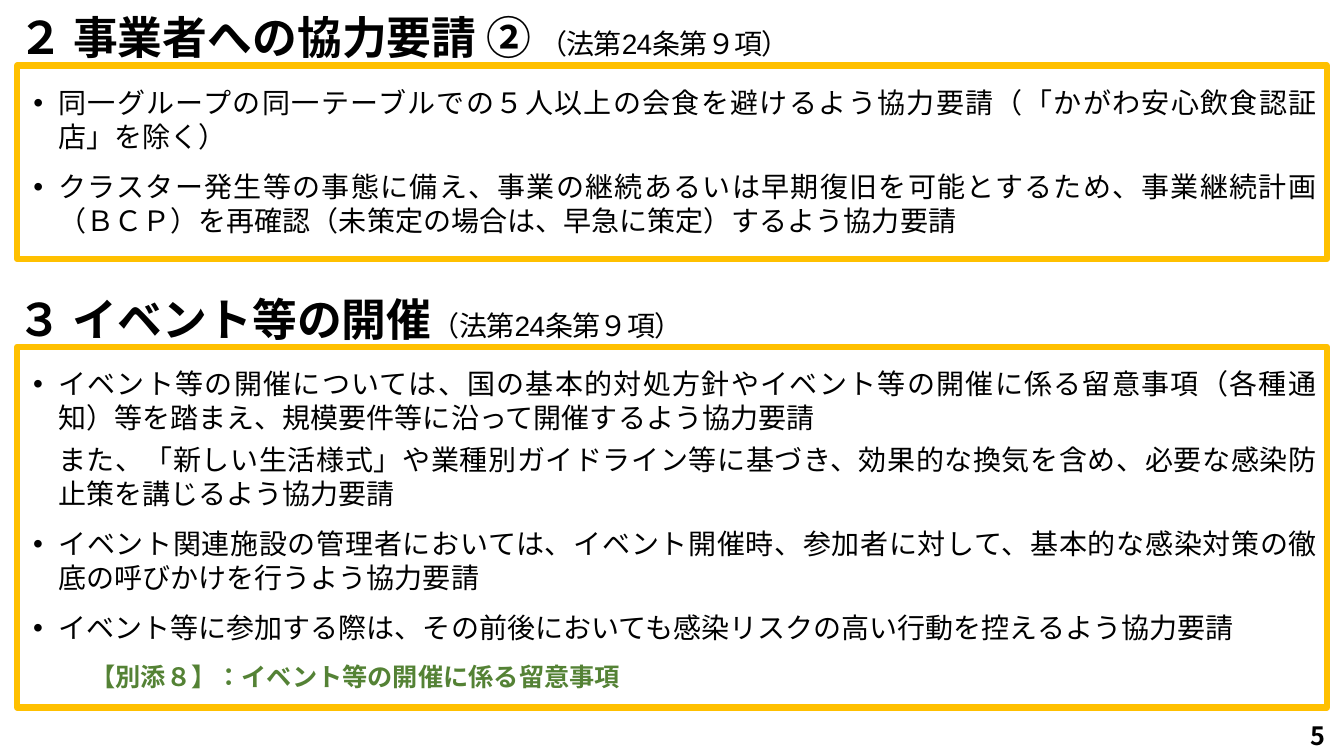
from pptx import Presentation
from pptx import util as u
from pptx.dml.color import RGBColor
from pptx.enum import shapes, text
from pptx.oxml import parse_xml
from pptx.oxml.ns import nsdecls, qn

BLACK = RGBColor(0x00, 0x00, 0x00)
GOLD = RGBColor(0xFF, 0xC0, 0x00)
GREEN = RGBColor(0x54, 0x82, 0x35)
SANS, HEAVY = "Arial", "Noto Sans CJK JP"

HEAD = dict(size=u.Pt(32), name=HEAVY, bold=True)
LAW = dict(size=u.Pt(20), name=SANS, bold=False)
BODY = dict(size=u.Pt(20), name=SANS, bold=False)
NOTE = dict(size=u.Pt(18), name=SANS, bold=True)
PAGE = dict(size=u.Pt(18), name=HEAVY, bold=True)


def add_run(p, words, fmt, color=BLACK, spacing=None):
    r = p.add_run()
    r.text = words
    for key, value in fmt.items():
        setattr(r.font, key, value)
    r.font.color.rgb = color
    rPr = r.font._element
    rPr.set("lang", "ja-JP")
    if spacing is not None:
        rPr.set("spc", str(spacing))
    rPr.find(qn("a:latin")).addnext(
        parse_xml(f'<a:ea {nsdecls("a")} typeface="{fmt["name"]}"/>'))


def place(sp, left, top, width, height, margins, anchor):
    sp.left, sp.top = u.Inches(left), u.Inches(top)
    sp.width, sp.height = u.Inches(width), u.Inches(height)
    tf = sp.text_frame
    frame = dict(word_wrap=True, auto_size=text.MSO_AUTO_SIZE.NONE, vertical_anchor=anchor)
    sides = ("margin_left", "margin_top", "margin_right", "margin_bottom")
    frame.update(zip(sides, map(u.Inches, margins)))
    for key, value in frame.items():
        setattr(tf, key, value)
    return tf


prs = Presentation()
prs.slide_width, prs.slide_height = u.Inches(13.33), u.Inches(7.5)
s = prs.slides.add_slide(prs.slide_layouts[1])

sections = [
    (0.05, 1.92, s.shapes.title, s.placeholders[1],
     "２ 事業者への協力要請 ②", " （法第24条第９項）",
     [("同一グループの同一テーブルでの５人以上の会食を避けるよう協力要請（「かがわ安心飲食認証店」を除く）", True, 12, BODY, BLACK),
      ("クラスター発生等の事態に備え、事業の継続あるいは早期復旧を可能とするため、事業継続計画（ＢＣＰ）を再確認（未策定の場合は、早急に策定）するよう協力要請", True, 12, BODY, BLACK)]),
    (2.84, 3.58, s.shapes.add_textbox(0, 0, 0, 0),
     s.shapes.add_shape(shapes.MSO_SHAPE.RECTANGLE, 0, 0, 0, 0),
     "３ イベント等の開催", "（法第24条第９項）",
     [("イベント等の開催については、国の基本的対処方針やイベント等の開催に係る留意事項（各種通知）等を踏まえ、規模要件等に沿って開催するよう協力要請", True, 0, BODY, BLACK),
      ("また、「新しい生活様式」や業種別ガイドライン等に基づき、効果的な換気を含め、必要な感染防止策を講じるよう協力要請", False, 6, BODY, BLACK),
      ("イベント関連施設の管理者においては、イベント開催時、参加者に対して、基本的な感染対策の徹底の呼びかけを行うよう協力要請", True, 12, BODY, BLACK),
      ("イベント等に参加する際は、その前後においても感染リスクの高い行動を控えるよう協力要請", True, 12, BODY, BLACK),
      ("\u3000 【別添８】：イベント等の開催に係る留意事項".replace("\u3000", "　"), False, 12, NOTE, GREEN)]),
]

for top, height, heading, box, name, law, items in sections:
    tf = place(heading, 0.08, top, 13.17, 0.7, (0.1, 0.05, 0.1, 0.05), text.MSO_ANCHOR.MIDDLE)
    p = tf.paragraphs[0]
    p.alignment, p.line_spacing = text.PP_ALIGN.LEFT, 0.9
    add_run(p, name, HEAD)
    add_run(p, law, LAW, spacing=-50)

    tf = place(box, 0.17, top + 0.6, 12.99, height, (0.1, 0.2, 0.1, 0.05), text.MSO_ANCHOR.TOP)
    box.fill.background()
    box.line.color.rgb, box.line.width = GOLD, u.Pt(4.5)
    if not box.is_placeholder:
        box.shadow.inherit = False
    for i, (words, bullet, before, fmt, color) in enumerate(items):
        p = tf.add_paragraph() if i else tf.paragraphs[0]
        p.alignment, p.space_before = text.PP_ALIGN.JUSTIFY, u.Pt(before)
        pPr = p._p.get_or_add_pPr()
        pPr.set("marL", str(u.Inches(0.31)))
        pPr.set("indent", str(u.Inches(-0.25 if bullet else 0)))
        marks = ['buFont typeface="Arial"', 'buChar char="•"'] if bullet else ["buNone"]
        for mark in marks:
            pPr.append(parse_xml(f'<a:{mark} {nsdecls("a")}/>'))
        add_run(p, words, fmt, color)

page = s.shapes.add_textbox(0, 0, 0, 0)
tf = place(page, 10.24, 7.1, 3, 0.4, (0.1, 0.05, 0.1, 0.05), text.MSO_ANCHOR.MIDDLE)
p = tf.paragraphs[0]
p.alignment = text.PP_ALIGN.RIGHT
add_run(p, "5", PAGE)

prs.save("out.pptx")
